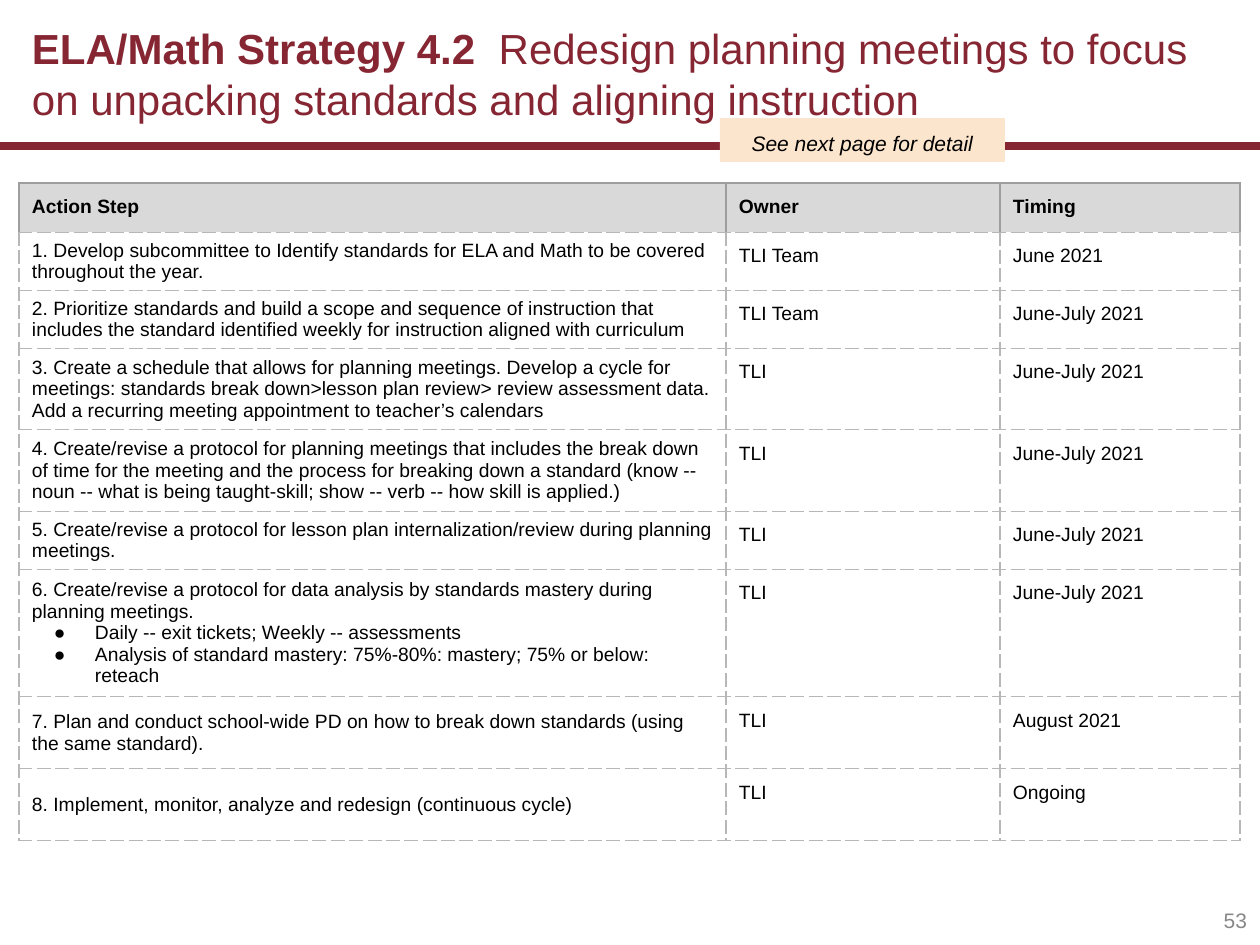
import pptx
import pptx.util
import pptx.dml.color
import pptx.enum.shapes
import pptx.enum.text
import pptx.oxml
import pptx.oxml.ns

TITLE = [
    ("ELA/Math Strategy 4.2 ", True),
    (" Redesign planning meetings to focus on unpacking standards and aligning instruction", False),
]
NOTE = "See next page for detail"
PAGE = "53"
HEAD = ("Action Step", "Owner", "Timing")
STEPS = [
    (["1. Develop subcommittee to Identify standards for ELA and Math to be covered throughout the year."],
     "TLI Team", "June 2021"),
    (["2. Prioritize standards and build a scope and sequence of instruction that includes the standard "
      "identified weekly for instruction aligned with curriculum"],
     "TLI Team", "June-July 2021"),
    (["3. Create a schedule that allows for planning meetings. Develop a cycle for meetings: standards "
      "break down>lesson plan review> review assessment data. Add a recurring meeting appointment to "
      "teacher’s calendars"],
     "TLI", "June-July 2021"),
    (["4. Create/revise a protocol for planning meetings that includes the break down of time for the "
      "meeting and the process for breaking down a standard (know -- noun -- what is being taught-skill; "
      "show -- verb -- how skill is applied.)"],
     "TLI", "June-July 2021"),
    (["5. Create/revise a protocol for lesson plan internalization/review during planning meetings."],
     "TLI", "June-July 2021"),
    (["6. Create/revise a protocol for data analysis by standards mastery during planning meetings.",
      "Daily -- exit tickets; Weekly -- assessments",
      "Analysis of standard mastery: 75%-80%: mastery; 75% or below: reteach"],
     "TLI", "June-July 2021"),
    (["7. Plan and conduct school-wide PD on how to break down standards (using the same standard)."],
     "TLI", "August 2021"),
    (["8. Implement, monitor, analyze and redesign (continuous cycle)"],
     "TLI", "Ongoing"),
]
COLS = (707, 274, 240)
ROWS = (45, 54, 57, 72, 72, 47, 72, 72, 72)
THEME = {
    "font": "Arial", "red": "862633", "black": "000000", "gray": "888888", "white": "FFFFFF",
    "head": "D9D9D9", "peach": "FCE5CD", "edge": "9E9E9E", "dash": "B7B7B7",
    "title": 24, "note": 12, "cell": 11, "rule": 5,
}
ALIGN = pptx.enum.text.PP_ALIGN
ANCHOR = pptx.enum.text.MSO_ANCHOR


def px(n):
    return pptx.util.Emu(round(n * 914400 / 126))


def tint(key):
    return pptx.dml.color.RGBColor.from_string(THEME[key])


def put(obj, **vals):
    for key, val in vals.items():
        setattr(obj, key, val)


def style(font, size, color="black", **vals):
    put(font, name=THEME["font"], size=pptx.util.Pt(THEME[size]), **vals)
    font.color.rgb = tint(color)


def inset(obj, side, edge):
    put(obj, margin_left=px(side), margin_right=px(side), margin_top=px(edge), margin_bottom=px(edge))


def node(tag, body="", **vals):
    attrs = "".join(f' {key}="{val}"' for key, val in vals.items())
    return pptx.oxml.parse_xml(f'<a:{tag} {pptx.oxml.ns.nsdecls("a")}{attrs}>{body}</a:{tag}>')


def bullet(para):
    props = para._p.get_or_add_pPr()
    put_at = {"marL": px(63), "indent": -px(41)}
    for key, val in put_at.items():
        props.set(key, str(val))
    props.append(node("buClr", f'<a:srgbClr val="{THEME["black"]}"/>'))
    props.append(node("buFont", typeface=THEME["font"]))
    props.append(node("buChar", char="●"))


def border(cell, top):
    props = cell._tc.get_or_add_tcPr()
    for side in "LRTB":
        solid = top and side != "B"
        color, kind = (THEME["edge"], "solid") if solid else (THEME["dash"], "dash")
        body = f'<a:solidFill><a:srgbClr val="{color}"/></a:solidFill><a:prstDash val="{kind}"/>'
        props.append(node("ln" + side, body, w=pptx.util.Pt(0.75)))


def write(cell, lines, top, step):
    border(cell, top)
    cell.fill.solid()
    cell.fill.fore_color.rgb = tint("head" if top else "white")
    inset(cell, 13, 6 if step else 13)
    cell.vertical_anchor = ANCHOR.MIDDLE if step else ANCHOR.TOP
    frame = cell.text_frame
    for i, line in enumerate(lines):
        para = frame.add_paragraph() if i else frame.paragraphs[0]
        if i:
            bullet(para)
        run = para.add_run()
        run.text = line
        style(run.font, "cell", bold=top)


def label(shape, runs, size, color, align, anchor, edge, **vals):
    frame = shape.text_frame
    put(frame, word_wrap=True, vertical_anchor=anchor)
    inset(frame, 13, edge)
    para = frame.paragraphs[0]
    para.alignment = align
    for text, bold in runs:
        run = para.add_run()
        run.text = text
        style(run.font, size, color, bold=bold, **vals)


def main():
    deck = pptx.Presentation()
    put(deck, slide_width=px(1260), slide_height=px(945))
    shapes = deck.slides.add_slide(deck.slide_layouts[6]).shapes

    rule = shapes.add_connector(pptx.enum.shapes.MSO_CONNECTOR.STRAIGHT, 0, px(146), px(1260), px(146))
    rule.line.color.rgb = tint("red")
    rule.line.width = pptx.util.Pt(THEME["rule"])
    rule._element.spPr.append(node("effectLst"))

    page = shapes.add_textbox(px(966), px(895), px(294), px(50))
    label(page, [(PAGE, False)], "note", "gray", ALIGN.RIGHT, ANCHOR.MIDDLE, 6)

    table = shapes.add_table(len(ROWS), len(COLS), px(19), px(183), px(sum(COLS)), px(sum(ROWS))).table
    put(table, first_row=False, horz_banding=False)
    for col, width in zip(table.columns, COLS):
        col.width = px(width)
    for row, height in zip(table.rows, ROWS):
        row.height = px(height)
    for c, text in enumerate(HEAD):
        write(table.cell(0, c), [text], True, False)
    for r, (lines, owner, timing) in enumerate(STEPS, 1):
        for c, part in enumerate((lines, [owner], [timing])):
            write(table.cell(r, c), part, False, c == 0)

    title = shapes.add_textbox(px(19), 0, px(1221), px(146))
    label(title, TITLE, "title", "red", ALIGN.LEFT, ANCHOR.MIDDLE, 6)

    note = shapes.add_shape(pptx.enum.shapes.MSO_SHAPE.RECTANGLE, px(720), px(118), px(285), px(44))
    note.shadow.inherit = False
    note.fill.solid()
    note.fill.fore_color.rgb = tint("peach")
    note.line.fill.background()
    label(note, [(NOTE, False)], "note", "black", ALIGN.CENTER, ANCHOR.TOP, 13, italic=True)

    deck.save("out.pptx")


if __name__ == "__main__":
    main()
